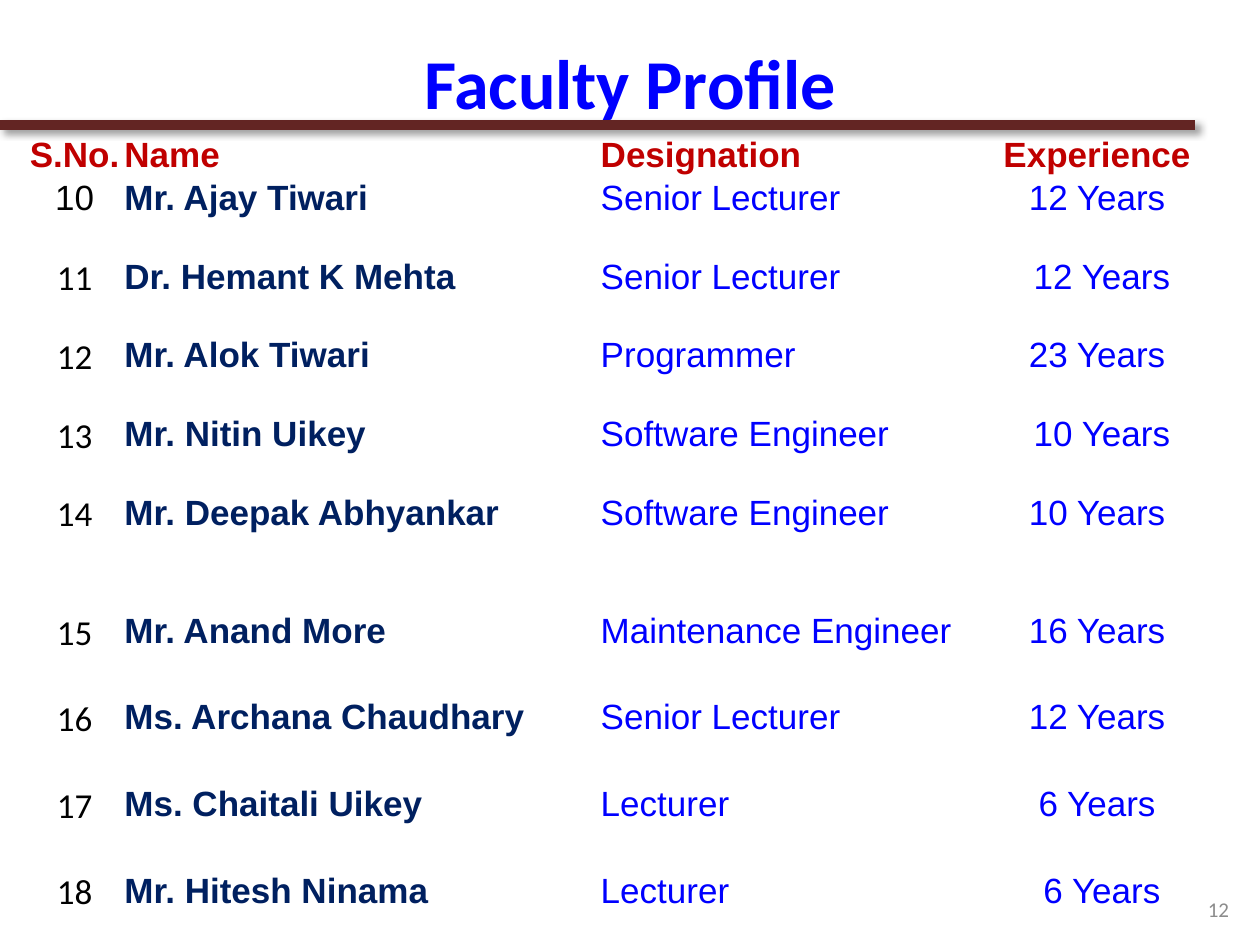
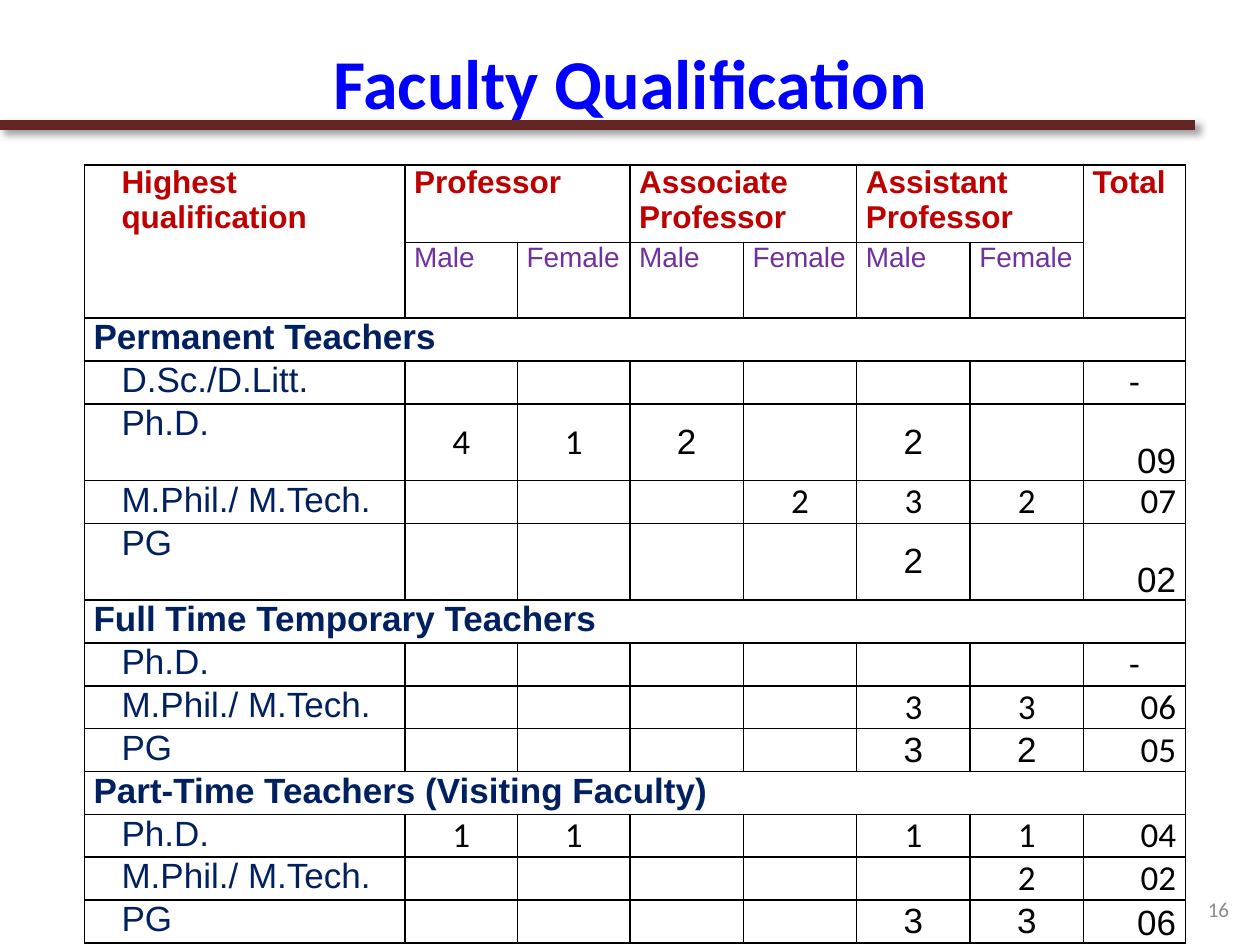
"""Build two faculty slides: a staff list and a qualification table."""
from lxml import etree
from pptx import Presentation
from pptx.dml.color import RGBColor
from pptx.enum.shapes import MSO_CONNECTOR
from pptx.enum.text import MSO_ANCHOR as Anchor, MSO_AUTO_SIZE, PP_ALIGN as Align
from pptx.oxml import parse_xml
from pptx.oxml.ns import nsdecls
from pptx.util import Pt

BLUE, RED, NAVY, PURPLE = "0000FF", "C00000", "002060", "7030A0"
MAROON, GREY, BLACK = "632523", "8C8C8C", "000000"
SANS, BODY = "Arial", "Calibri"

STAFF_HEAD = ["S.No.", "Name", "Designation", "Experience"]
STAFF = [
    ("Mr. Ajay Tiwari", "Senior Lecturer", "12 Years"),
    ("Dr. Hemant K Mehta", "Senior Lecturer", " 12 Years"),
    ("Mr. Alok Tiwari", "Programmer", "23 Years"),
    ("Mr. Nitin Uikey", "Software Engineer", " 10 Years"),
    ("Mr. Deepak Abhyankar", "Software Engineer", "10 Years"),
    ("Mr. Anand More", "Maintenance Engineer", "16 Years"),
    ("Ms. Archana Chaudhary", "Senior Lecturer", "12 Years"),
    ("Ms. Chaitali Uikey", "Lecturer", "6 Years"),
    ("Mr. Hitesh Ninama", "Lecturer", " 6 Years"),
]
FIRST_NUMBER = 10

RANKS = ["Professor", "Associate Professor", "Assistant Professor"]
GROUPS = [
    ("Permanent Teachers", [
        ("D.Sc./D.Litt.", {7: "-"}, ()),
        ("Ph.D.", {1: "4", 2: "1", 3: "2", 5: "2", 7: "09"}, (3, 5, 7)),
        ("M.Phil./ M.Tech.", {4: "2", 5: "3", 6: "2", 7: "07"}, ()),
        ("PG", {5: "2", 7: "02"}, (5, 7)),
    ]),
    ("Full Time Temporary Teachers", [
        ("Ph.D.", {7: "-"}, ()),
        ("M.Phil./ M.Tech.", {5: "3", 6: "3", 7: "06"}, ()),
        ("PG", {5: "3", 6: "2", 7: "05"}, (5, 6)),
    ]),
    ("Part-Time Teachers (Visiting Faculty)", [
        ("Ph.D.", {1: "1", 2: "1", 5: "1", 6: "1", 7: "04"}, ()),
        ("M.Phil./ M.Tech.", {6: "2", 7: "02"}, ()),
        ("PG", {5: "3", 6: "3", 7: "06"}, (5, 6, 7)),
    ]),
]


def rgb(color):
    return RGBColor.from_string(color)


class Deck:
    def __init__(self):
        self.prs = Presentation()
        self.prs.slide_width, self.prs.slide_height = Pt(720), Pt(540)
        self.slide = None

    def format(self, p, size, color, font=SANS, bold=False, align=Align.LEFT):
        p.alignment = align
        for r in p.runs:
            r.font.size, r.font.name, r.font.bold = Pt(size), font, bold
            r.font.color.rgb = rgb(color)

    def new_slide(self, title, number):
        self.slide = self.prs.slides.add_slide(self.prs.slide_layouts[5])
        self.title(title)
        self.rule()
        self.page_number(number)

    def title(self, text):
        sp = self.slide.shapes.title
        sp.left, sp.top, sp.width, sp.height = Pt(36), Pt(21.6), Pt(648), Pt(49.7)
        tf = sp.text_frame
        tf.text = text
        tf.auto_size = MSO_AUTO_SIZE.NONE
        tf.vertical_anchor = Anchor.MIDDLE
        self.format(tf.paragraphs[0], 40, BLUE, BODY, True, Align.CENTER)

    def rule(self):
        y = Pt(71.3)
        line = self.slide.shapes.add_connector(
            MSO_CONNECTOR.STRAIGHT, 0, y, Pt(683), y)
        line.line.color.rgb = rgb(MAROON)
        line.line.width = Pt(6)
        line._element.spPr.append(parse_xml(
            f'<a:effectLst {nsdecls("a")}>'
            f'<a:outerShdw blurRad="{Pt(4)}" dist="{Pt(3)}" dir="2700000" '
            'algn="tl" rotWithShape="0"><a:srgbClr val="000000">'
            '<a:alpha val="40000"/></a:srgbClr></a:outerShdw></a:effectLst>'))

    def page_number(self, number):
        sp = self.slide.shapes.add_textbox(Pt(541.4), Pt(508), Pt(168), Pt(23))
        tf = sp.text_frame
        tf.word_wrap = True
        tf.vertical_anchor = Anchor.MIDDLE
        tf.text = str(number)
        self.format(tf.paragraphs[0], 12, GREY, BODY, align=Align.RIGHT)

    def table(self, left, top, widths, heights, inset=0, border=None):
        frame = self.slide.shapes.add_table(
            len(heights), len(widths), Pt(left), Pt(top),
            Pt(sum(widths)), Pt(sum(heights)))
        tbl = frame.table
        tbl.first_row = tbl.horz_banding = False
        for col, width in zip(tbl.columns, widths):
            col.width = Pt(width)
        for row, height in zip(tbl.rows, heights):
            row.height = Pt(height)
        for cell in tbl.iter_cells():
            cell.margin_left = cell.margin_right = Pt(inset)
            cell.margin_top = cell.margin_bottom = 0
            self.border(cell, border)
            cell.fill.background()
        return tbl

    def border(self, cell, color):
        tcPr = cell._tc.get_or_add_tcPr()
        ns = nsdecls("a")
        paint = f"<a:noFill {ns}/>"
        if color:
            paint = f'<a:solidFill {ns}><a:srgbClr val="{color}"/></a:solidFill>'
        for side in "LRTB":
            ln = etree.SubElement(tcPr, tcPr.tag.replace("tcPr", f"ln{side}"),
                                  w=str(Pt(1)))
            ln.append(parse_xml(paint))

    def cell(self, cell, text, size, color, font=SANS, bold=False,
             align=Align.LEFT, anchor=Anchor.TOP, indent=0):
        cell.text = text
        cell.vertical_anchor = anchor
        p = cell.text_frame.paragraphs[0]
        self.format(p, size, color, font, bold, align)
        if indent:
            pPr = p._p.get_or_add_pPr()
            pPr.set("marL", str(Pt(indent)))
            pPr.set("indent", "0")


def faculty_profile(deck):
    deck.new_slide("Faculty Profile", 12)
    heights = [24.6] + [45] * 4 + [67.5] + [49.5] * 3 + [36]
    tbl = deck.table(14.2, 77.5, [56.9, 272.2, 227.5, 112.3], heights)
    aligns = [Align.CENTER, Align.LEFT, Align.LEFT, Align.CENTER]
    colors = [BLACK, NAVY, BLUE, BLUE]
    for c, text in enumerate(STAFF_HEAD):
        deck.cell(tbl.cell(0, c), text, 20, RED, bold=True, align=aligns[c])
    for i, person in enumerate(STAFF):
        for c, text in enumerate((str(FIRST_NUMBER + i), *person)):
            font = BODY if c == 0 and i else SANS
            deck.cell(tbl.cell(i + 1, c), text, 20, colors[c], font,
                      bold=c == 1, align=aligns[c])


def faculty_qualification(deck):
    deck.new_slide("Faculty Qualification", 16)
    line, tall = 24.5, 43.8
    heights = [44.3, 43, line, line, tall, line, tall] + [line] * 8
    widths = [183.2, 64.3, 64.3] + [64.8] * 4 + [58.2]
    tbl = deck.table(48.2, 94.3, widths, heights, inset=5.3, border=BLACK)
    head = dict(size=18, color=RED, bold=True, align=Align.JUSTIFY)
    for c, text, indent in ((0, "Highest qualification", 16), (7, "Total", 0)):
        tbl.cell(0, c).merge(tbl.cell(1, c))
        deck.cell(tbl.cell(0, c), text, indent=indent, **head)
    for i, rank in enumerate(RANKS):
        c = 1 + 2 * i
        tbl.cell(0, c).merge(tbl.cell(0, c + 1))
        deck.cell(tbl.cell(0, c), rank, **head)
        for k, sex in enumerate(("Male", "Female")):
            deck.cell(tbl.cell(1, c + k), sex, 16, PURPLE, align=Align.JUSTIFY)
    row = 2
    for group, levels in GROUPS:
        tbl.cell(row, 0).merge(tbl.cell(row, 7))
        deck.cell(tbl.cell(row, 0), group, 20, NAVY, bold=True, align=Align.JUSTIFY)
        for row, (level, counts, sans_cols) in enumerate(levels, row + 1):
            deck.cell(tbl.cell(row, 0), level, 20, NAVY,
                      align=Align.JUSTIFY, indent=16)
            for c, text in counts.items():
                total = c == 7 and text != "-"
                deck.cell(tbl.cell(row, c), text, 20, BLACK,
                          SANS if c in sans_cols else BODY,
                          align=Align.RIGHT if total else Align.CENTER,
                          anchor=Anchor.BOTTOM if total else Anchor.MIDDLE)
        row += 1


def main():
    deck = Deck()
    faculty_profile(deck)
    faculty_qualification(deck)
    deck.prs.save("out.pptx")


if __name__ == "__main__":
    main()
